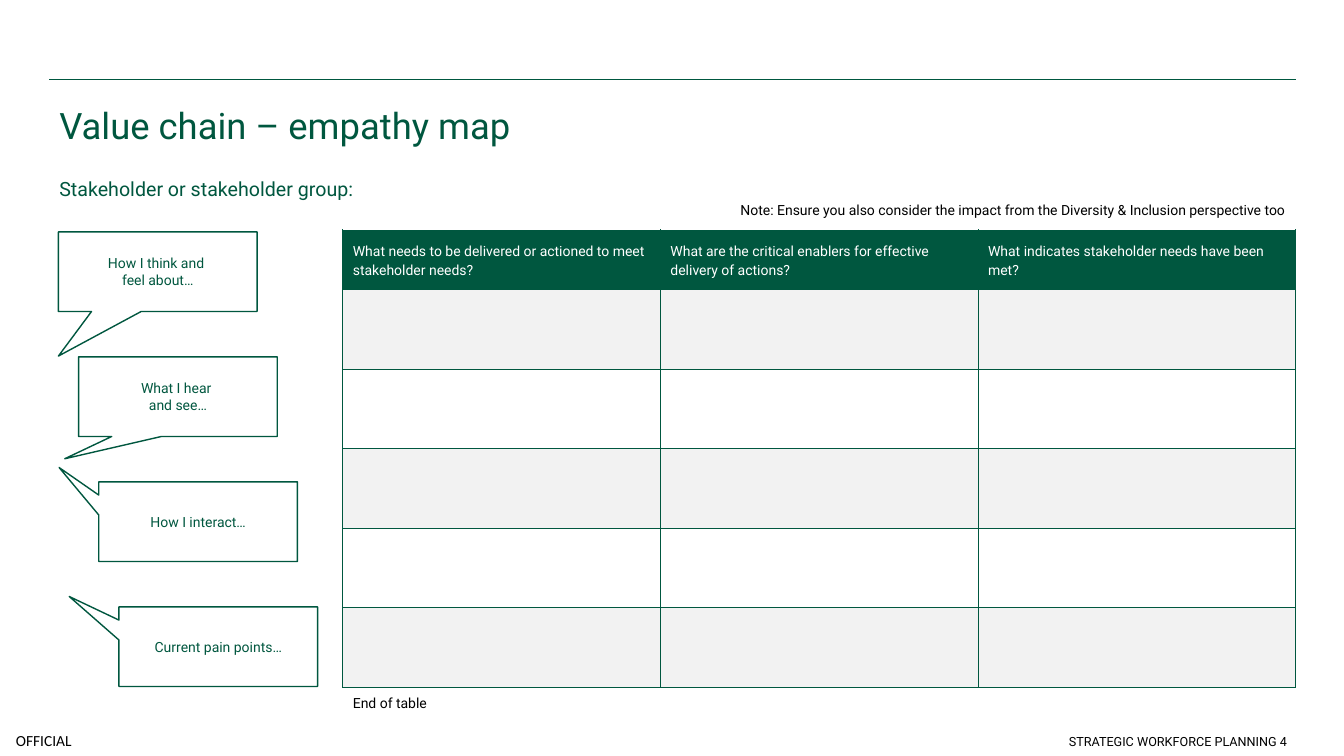
from copy import deepcopy

from lxml import etree
from pptx import Presentation
from pptx.dml.color import RGBColor
from pptx.enum.shapes import MSO_CONNECTOR, MSO_SHAPE
from pptx.enum.text import MSO_ANCHOR, PP_ALIGN
from pptx.oxml.ns import qn
from pptx.util import Pt

LEFT, CENTER, RIGHT = PP_ALIGN.LEFT, PP_ALIGN.CENTER, PP_ALIGN.RIGHT
TOP, MIDDLE, BOTTOM = MSO_ANCHOR.TOP, MSO_ANCHOR.MIDDLE, MSO_ANCHOR.BOTTOM
CALLOUT = MSO_SHAPE.RECTANGULAR_CALLOUT
STRAIGHT = MSO_CONNECTOR.STRAIGHT

COLORS = {"green": "00573F", "white": "FFFFFF", "band": "F2F2F2", "black": "000000"}
EMU_PER_PX = 9144
SLIDE_SIZE = (1333, 750)
RULE = (49, 79, 1285, 79)

TEXTS = [
    ("OFFICIAL", (0, 719, 87, 31),
     dict(size=11, color="black", font="Calibri", align=CENTER, anchor=MIDDLE, inset=(0, 0))),
    ("Value chain – empathy map", (49, 89, 1236, 102), dict(size=26, spacing=1.2)),
    ("Stakeholder or stakeholder group:", (49, 148, 1236, 79), dict(size=14, anchor=MIDDLE)),
    ("Note: Ensure you also consider the impact from the Diversity & Inclusion perspective too",
     (654, 187, 630, 39), dict(color="black", align=RIGHT, anchor=MIDDLE, spacing=1.2)),
    ("STRATEGIC WORKFORCE PLANNING 4", (684, 709, 602, 39),
     dict(size=9, color="black", align=RIGHT, anchor=BOTTOM)),
]

CALLOUTS = [
    ("How I think and \nfeel about…", (-0.5, 1.06)),
    ("What I hear \nand see…", (-0.57, 0.78)),
    ("How I interact…", (-0.7, -0.68)),
    ("Current pain points…", (-0.75, -0.63)),
]
CALLOUT_START = (58, 230)
CALLOUT_STEP = (20, 124)
CALLOUT_SIZE = (197, 79)

HEADERS = [
    "What needs to be delivered or actioned to meet stakeholder needs?",
    "What are the critical enablers for effective delivery of actions?",
    "What indicates stakeholder needs have been met?",
]
TABLE_END = "End of table"
TABLE_AT = (340, 228)
COLUMN_WIDTH = 315
ROW_HEIGHTS = [59] + [79] * 5 + [39]


def px(*lengths):
    return [length * EMU_PER_PX for length in lengths]


def rgb(name):
    return RGBColor.from_string(COLORS[name])


def write(frame, text, size=10, color="green", font="Roboto", align=LEFT,
          anchor=TOP, spacing=None, inset=(10, 5)):
    frame.word_wrap = True
    frame.vertical_anchor = anchor
    frame.margin_left = frame.margin_right = inset[0] * EMU_PER_PX
    frame.margin_top = frame.margin_bottom = inset[1] * EMU_PER_PX
    para = frame.paragraphs[0]
    para.text = text
    para.alignment = align
    if spacing:
        para.line_spacing = spacing
    for span in para.runs:
        span.font.size = Pt(size)
        span.font.name = font
        span.font.bold = False
        span.font.color.rgb = rgb(color)
    for line_break in para._p.findall(qn("a:br")):
        line_break.append(deepcopy(para.runs[0]._r.rPr))


def set_borders(cell, visible):
    properties = cell._tc.get_or_add_tcPr()
    for index, side in enumerate("LRTB"):
        border = etree.Element(qn(f"a:ln{side}"), w=str(Pt(0.5)))
        if side in visible:
            fill = etree.SubElement(border, qn("a:solidFill"))
            etree.SubElement(fill, qn("a:srgbClr"), val=COLORS["green"])
        else:
            etree.SubElement(border, qn("a:noFill"))
        properties.insert(index, border)


def add_rule(page):
    rule = page.shapes.add_connector(STRAIGHT, *px(*RULE))
    rule.line.color.rgb = rgb("green")
    rule.line.width = Pt(1)
    etree.SubElement(rule._element.spPr, qn("a:effectLst"))


def add_callouts(page):
    for index, (text, tip) in enumerate(CALLOUTS):
        corner = [start + index * step for start, step in zip(CALLOUT_START, CALLOUT_STEP)]
        bubble = page.shapes.add_shape(CALLOUT, *px(*corner, *CALLOUT_SIZE))
        bubble.shadow.inherit = False
        bubble.adjustments[0], bubble.adjustments[1] = tip
        bubble.fill.solid()
        bubble.fill.fore_color.rgb = rgb("white")
        bubble.line.color.rgb = rgb("green")
        bubble.line.width = Pt(1)
        write(bubble.text_frame, text, align=CENTER, anchor=MIDDLE)


def add_table(page):
    last = len(ROW_HEIGHTS) - 1
    size = (COLUMN_WIDTH * len(HEADERS), sum(ROW_HEIGHTS))
    table = page.shapes.add_table(len(ROW_HEIGHTS), len(HEADERS), *px(*TABLE_AT, *size)).table
    table.horz_banding = False
    for column in table.columns:
        column.width = COLUMN_WIDTH * EMU_PER_PX
    for row_index, height in enumerate(ROW_HEIGHTS):
        table.rows[row_index].height = height * EMU_PER_PX
        for column_index, header in enumerate(HEADERS):
            cell = table.cell(row_index, column_index)
            cell.margin_top = cell.margin_bottom = 0
            cell.fill.solid()
            if row_index == 0:
                fill = "green"
            else:
                fill = "band" if row_index % 2 and row_index < last else "white"
            cell.fill.fore_color.rgb = rgb(fill)
            set_borders(cell, "T" if row_index == last else "LRTB")
            if row_index == 0:
                write_cell(cell, header, "white", MIDDLE)
            elif row_index == last and column_index == 0:
                write_cell(cell, TABLE_END, "black", TOP)


def write_cell(cell, text, color, anchor):
    write(cell.text_frame, text, color=color, spacing=1.2)
    cell.vertical_anchor = anchor
    cell.margin_left, cell.margin_right, cell.margin_top, cell.margin_bottom = px(10, 10, 5, 5)


def main():
    deck = Presentation()
    deck.slide_width, deck.slide_height = px(*SLIDE_SIZE)
    page = deck.slides.add_slide(deck.slide_layouts[6])
    add_rule(page)
    for text, area, style in TEXTS:
        box = page.shapes.add_textbox(*px(*area))
        write(box.text_frame, text, **style)
    add_callouts(page)
    add_table(page)
    deck.save("out.pptx")


if __name__ == "__main__":
    main()
